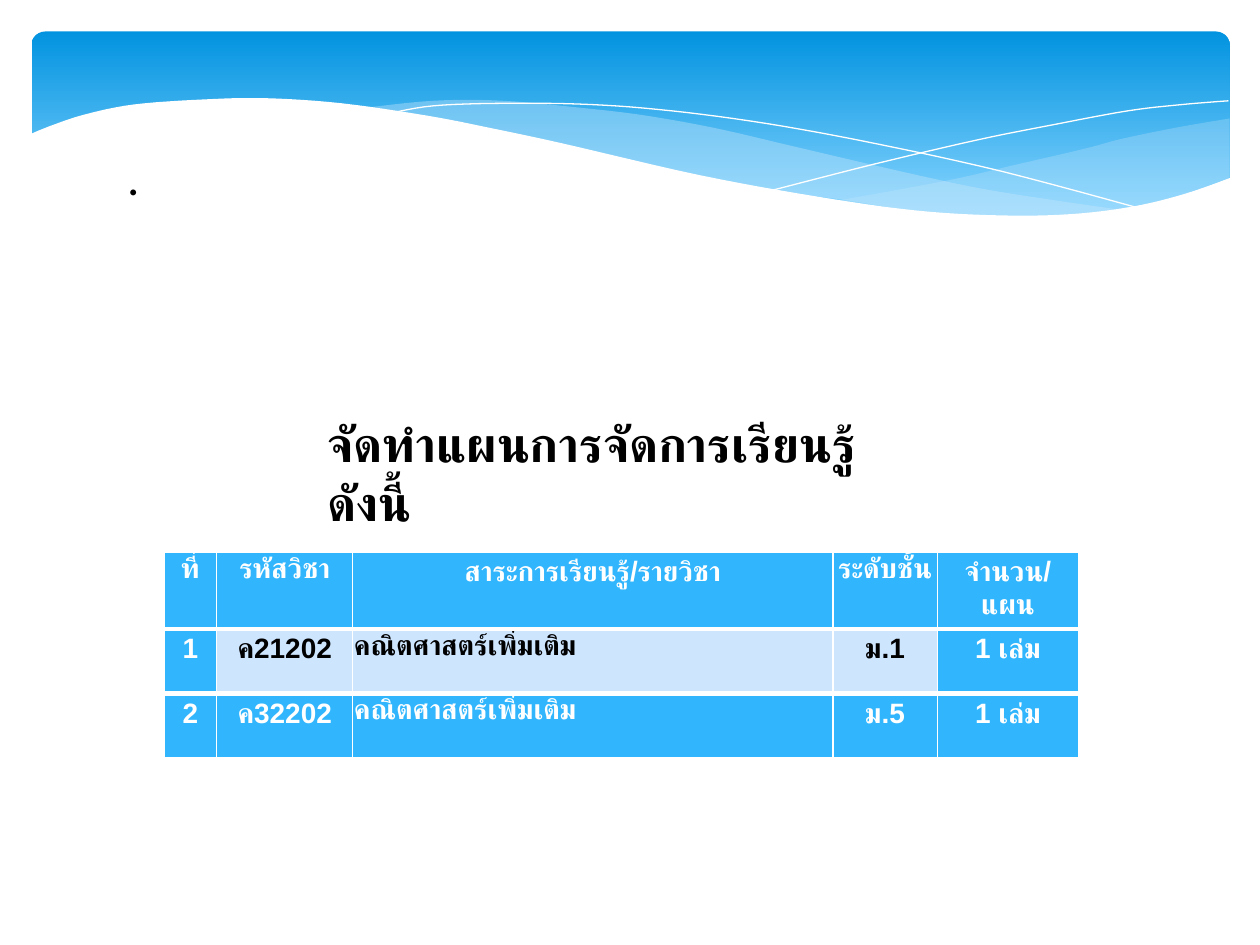
from lxml.etree import SubElement
from pptx import Presentation
from pptx.dml.color import RGBColor
from pptx.enum.shapes import MSO_SHAPE as Shape
from pptx.enum.text import MSO_ANCHOR as Anchor, MSO_AUTO_SIZE as AutoSize, PP_ALIGN as Align
from pptx.oxml import parse_xml
from pptx.oxml.ns import nsdecls, qn
from pptx.util import Inches, Pt

COLORS = {
    "white": "FFFFFF", "black": "000000", "sky": "31B6FD", "pale": "CEE5FE",
    "ribbon": "C6E7FC", "band_top": "0293E0", "band_bottom": "83D3FE",
}

# Points are (column, row) on a grid of 100 columns and 75 rows.
RIGHT_RIBBON = [
    [(97.6, 9.4), (93.5, 10.1), (89.1, 11), (86.1, 11.8), (80.5, 13.1), (75.3, 14.3), (66.1, 16)],
    [(66.1, 16), (70.5, 16.5), (75.7, 17), (81.4, 17.2), (87.2, 16.9), (92.1, 16), (97.6, 14.1)],
]
LONG_RIBBON = [
    [(89.3, 16.7), (83.7, 15.9), (77.5, 14.9), (70.6, 13.4), (62.9, 11.6), (56.9, 10.2),
     (51.4, 9.2), (46.5, 8.6), (39.9, 8), (34.4, 8), (28.6, 8.6)],
    [(28.6, 8.6), (34.2, 9.4), (40.4, 10.6), (44.9, 11.6), (53, 13.5), (60.1, 15),
     (66.5, 15.8), (73.6, 16.9), (79.6, 17.3), (84.8, 17.2), (89.3, 16.7)],
]
FALLING_LINE = [
    [(30.9, 9), (34.4, 8.4), (40.1, 8.2), (46.9, 8.3), (53.3, 8.8), (60.8, 9.8),
     (69.5, 11.4), (79.5, 13.6), (90.7, 16.6)],
]
RISING_LINE = [
    [(61.3, 15.1), (69.5, 13), (77.6, 11.1), (83.6, 9.9), (89.5, 8.8), (93.8, 8.3), (97.5, 8)],
]
WHITE_WAVE = [
    [(97.7, 14.1), (94, 15.4), (89.9, 16.4), (85, 17), (79.3, 17.1), (72.6, 16.7),
     (64.8, 15.6), (55.5, 13.9), (44.7, 11.4), (39.1, 10.2), (34, 9.2), (27.1, 8.2),
     (21.1, 7.8), (16.1, 7.9), (10.6, 8.3), (6.7, 9.1), (4, 10), (2.3, 10.7)],
    [(2.3, 22.4), (97.7, 22.4)],
]

COLUMN_WIDTHS = [4.2, 10.8, 38.1, 8.3, 11.2]
ROWS = [
    ["ที่", "รหัสวิชา", "สาระการเรียนรู้/รายวิชา", "ระดับชั้น", "จำนวน/แผน"],
    ["1", "ค21202", "คณิตศาสตร์เพิ่มเติม", "ม.1", "1 เล่ม"],
    ["2", "ค32202", "คณิตศาสตร์เพิ่มเติม", "ม.5", "1 เล่ม"],
]


def grid(*counts):
    """Turn counts of columns or rows into lengths."""
    return [Inches(count / 10) for count in counts]


def color(name):
    return RGBColor.from_string(COLORS[name])


def smooth(points, steps=6):
    """Sample a Catmull-Rom curve through the points."""
    padded = [points[0], *points, points[-1]]
    curve = [points[0]]
    for a, b, c, d in zip(padded, padded[1:], padded[2:], padded[3:]):
        for step in range(1, steps + 1):
            t = step / steps
            curve.append(tuple(
                (2 * q + (r - p) * t + (2 * p - 5 * q + 4 * r - s) * t ** 2
                 + (3 * q - p - 3 * r + s) * t ** 3) / 2
                for p, q, r, s in zip(a, b, c, d)))
    return curve


def add_outline(slide, curves, closed):
    points = [grid(*point) for curve in curves for point in smooth(curve)]
    builder = slide.shapes.build_freeform(*points[0])
    builder.add_line_segments(points[1:], close=closed)
    shape = builder.convert_to_shape()
    shape.shadow.inherit = False
    return shape


def add_area(slide, curves, fill, opacity=100):
    shape = add_outline(slide, curves, True)
    shape.fill.solid()
    shape.fill.fore_color.rgb = color(fill)
    shape.line.fill.background()
    if opacity < 100:
        tint = shape.fill._xPr.find(qn("a:solidFill"))[0]
        SubElement(tint, qn("a:alpha"), val=str(opacity * 1000))


def add_hairline(slide, curves):
    shape = add_outline(slide, curves, False)
    shape.fill.background()
    shape.line.color.rgb = color("white")
    shape.line.width = Pt(0)


def add_band(slide):
    band = slide.shapes.add_shape(Shape.ROUNDED_RECTANGLE, *grid(2.5, 2.5, 95.1, 15.6))
    band.adjustments[0] = 0.07
    band.shadow.inherit = False
    band.line.fill.background()
    band.fill.gradient()
    band.fill.gradient_angle = 270
    stops = zip(band.fill.gradient_stops, ("band_top", "band_bottom"), (0, 0.9))
    for stop, name, position in stops:
        stop.color.rgb = color(name)
        stop.position = position


def add_run(paragraph, text, size, font="Arial", ink="black", bold=True):
    run = paragraph.add_run()
    run.text = text
    run.font.size = Pt(size)
    run.font.name = font
    run.font.bold = bold
    run.font.color.rgb = color(ink)


def set_title(slide):
    title = slide.shapes.title
    title.left, title.top, title.width, title.height = grid(25, 32.3, 50.2, 10.4)
    frame = title.text_frame
    frame.word_wrap = True
    frame.auto_size = AutoSize.NONE
    frame.vertical_anchor = Anchor.TOP
    paragraph = frame.paragraphs[0]
    paragraph.alignment = Align.LEFT
    add_run(paragraph, "จัดทำแผนการจัดการเรียนรู้", 28)
    paragraph.add_line_break()
    add_run(paragraph, "ดังนี้", 28)


def add_dot(slide):
    box = slide.shapes.add_textbox(*grid(9.1, 11.1, 73.2, 5.7))
    box.text_frame.word_wrap = True
    add_run(box.text_frame.paragraphs[0], ".", 28, "Calibri", bold=False)


def set_borders(cell, top, bottom):
    properties = cell._tc.get_or_add_tcPr()
    widths = {"lnL": 1, "lnR": 1, "lnT": top, "lnB": bottom}
    for index, (side, width) in enumerate(widths.items()):
        properties.insert(index, parse_xml(
            f'<a:{side} {nsdecls("a")} w="{Pt(width)}"><a:solidFill>'
            f'<a:srgbClr val="{COLORS["white"]}"/></a:solidFill></a:{side}>'))


def fill_cell(cell, text, fill, ink, alignment):
    cell.margin_left = cell.margin_right = Inches(0.01)
    cell.margin_top = cell.margin_bottom = 0
    cell.fill.solid()
    cell.fill.fore_color.rgb = color(fill)
    paragraph = cell.text_frame.paragraphs[0]
    paragraph.alignment = alignment
    paragraph.line_spacing = 1.15
    add_run(paragraph, text, 16, ink=ink)


def add_plan_table(slide):
    last = len(ROWS) - 1
    frame = slide.shapes.add_table(len(ROWS), len(COLUMN_WIDTHS), *grid(13, 43.8, 72.6, 15.2))
    table = frame.table
    table.horz_banding = False
    for column, width in zip(table.columns, grid(*COLUMN_WIDTHS)):
        column.width = width
    for r, row in enumerate(ROWS):
        table.rows[r].height = Inches(0.51)
        for c, text in enumerate(row):
            cell = table.cell(r, c)
            pale = r == 1 and 0 < c < 4
            alignment = Align.LEFT if r and c == 2 else Align.CENTER
            fill_cell(cell, text, "pale" if pale else "sky", "black" if pale else "white", alignment)
            set_borders(cell, 3 if r else 1, 3 if r < last else 1)


def main():
    presentation = Presentation()
    presentation.slide_width, presentation.slide_height = grid(100, 75)
    slide = presentation.slides.add_slide(presentation.slide_layouts[5])
    add_band(slide)
    add_area(slide, RIGHT_RIBBON, "ribbon", 29)
    add_area(slide, LONG_RIBBON, "ribbon", 40)
    add_hairline(slide, FALLING_LINE)
    add_hairline(slide, RISING_LINE)
    add_area(slide, WHITE_WAVE, "white")
    add_dot(slide)
    add_plan_table(slide)
    set_title(slide)
    presentation.save("out.pptx")


if __name__ == "__main__":
    main()
